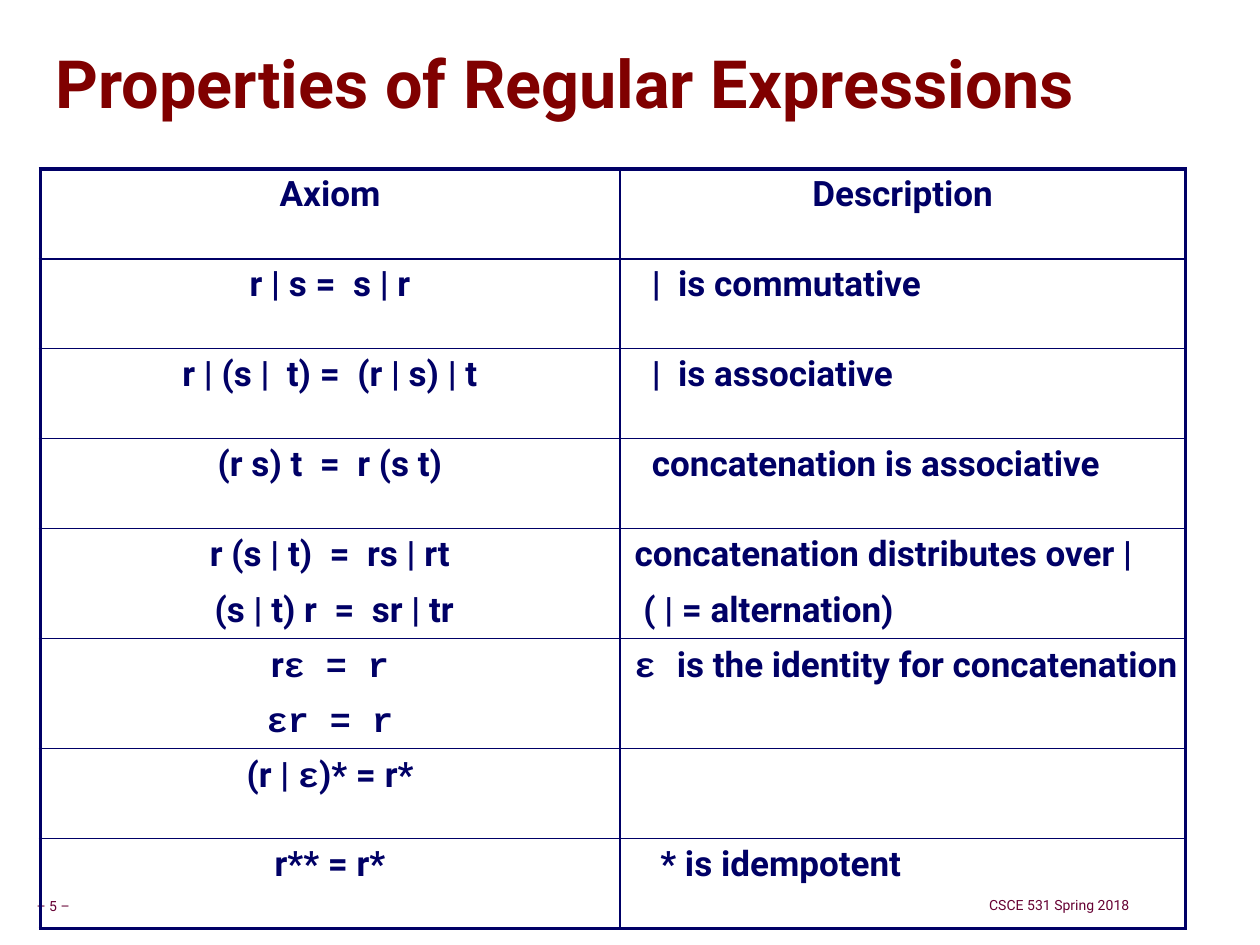
from typing import NamedTuple

from lxml.etree import SubElement
from pptx import Presentation
from pptx.dml.color import RGBColor
from pptx.enum.text import MSO_ANCHOR as Anchor, PP_ALIGN as Align
from pptx.oxml import parse_xml
from pptx.oxml.ns import nsdecls, qn
from pptx.util import Pt

COLORS = {"title": "800000", "table": "000066", "footer": "660033", "shadow": "969696"}
SANS, MONO = "Roboto", "Courier New"
INSET = 3.6
SPACE_WIDTH = 4.9
THIN, THICK = 1, 2.25


class Span(NamedTuple):
    text: str
    font: str = SANS


class Line(NamedTuple):
    spans: tuple[Span, ...]
    indent: int = 0  # in widths of one space


class Label(NamedTuple):
    text: str
    box: tuple[float, float, float, float]
    size: float
    color: str
    spacing: float
    anchor: Anchor
    inset: float = INSET
    bold: bool = False
    wrap: bool = False


class Row(NamedTuple):
    height: float
    axiom: tuple[Line, ...]
    description: tuple[Line, ...]


def line(*parts: str | Span, indent: int = 0) -> Line:
    return Line(tuple(Span(p) if isinstance(p, str) else p for p in parts), indent)


LABELS = [
    Label("– 5 –", (17.3, 504, 47.5, 22.3), 8, "footer", 0.9, Anchor.BOTTOM),
    Label("CSCE 531 Spring 2018", (561.6, 503.3, 154, 22.3), 8, "footer", 0.9, Anchor.BOTTOM),
    Label("Properties of Regular Expressions", (31.7, 19.4, 686, 61.2), 38, "title", 0.87,
          Anchor.MIDDLE, inset=0, bold=True, wrap=True),
]

SHORT, TALL = 51.4, 62.2
ROWS = [
    Row(SHORT, (line("Axiom"),), (line("Description"),)),
    Row(SHORT, (line("r | s =  s | r"),), (line("|  is commutative", indent=3),)),
    Row(SHORT, (line("r | (s |  t) =  (r | s) | t"),), (line("|  is associative", indent=3),)),
    Row(SHORT, (line("(r s) t  =  r (s t)"),),
        (line("concatenation is associative", indent=3),)),
    Row(TALL, (line("r (s | t)  =  rs | rt"), line("(s | t) r  =  sr | tr", indent=1)),
        (line("concatenation distributes over |", indent=1),
         line("( | = alternation)", indent=2))),
    Row(TALL, (line("r", Span("ε = r", MONO)), line(Span("εr = r", MONO))),
        (line(Span("ε ", MONO), "is the identity for concatenation", indent=1),)),
    Row(SHORT, (line("(r | ", Span("ε", MONO), ")* = r*"),), ()),
    Row(SHORT, (line("r** = r*"),), (line("* is idempotent", indent=4),)),
]
COLUMN_WIDTHS = (331.2, 323.3)
TABLE_LEFT, TABLE_TOP = 23, 96.5


def style_run(run, font: str, size: float, color: str, bold: bool) -> None:
    run.font.name = font
    run.font.size = Pt(size)
    run.font.bold = bold
    run.font.color.rgb = RGBColor.from_string(COLORS[color])


def add_text_shadow(run) -> None:
    effects = parse_xml(
        f'<a:effectLst {nsdecls("a")}><a:outerShdw dist="35921" dir="2700000">'
        f'<a:srgbClr val="{COLORS["shadow"]}"/></a:outerShdw></a:effectLst>')
    run.font._element.find(qn("a:solidFill")).addnext(effects)


def add_label(slide, label: Label):
    box = slide.shapes.add_textbox(*map(Pt, label.box))
    frame = box.text_frame
    frame.word_wrap = label.wrap
    frame.vertical_anchor = label.anchor
    frame.margin_left = frame.margin_right = Pt(label.inset)
    frame.margin_top = frame.margin_bottom = Pt(label.inset)
    frame.text = label.text
    paragraph = frame.paragraphs[0]
    paragraph.alignment = Align.LEFT
    paragraph.line_spacing = label.spacing
    style_run(paragraph.runs[0], SANS, label.size, label.color, label.bold)
    return box


def fill_cell(cell, lines: tuple[Line, ...], align: Align) -> None:
    cell.fill.background()
    cell.margin_left = cell.margin_right = Pt(INSET)
    cell.margin_top = cell.margin_bottom = Pt(INSET)
    frame = cell.text_frame
    for index, content in enumerate(lines):
        paragraph = frame.add_paragraph() if index else frame.paragraphs[0]
        paragraph.alignment = align
        paragraph.line_spacing = 0.95
        if index:
            paragraph.space_before = Pt(10)
        if content.indent:
            paragraph._p.get_or_add_pPr().set("marL", str(Pt(content.indent * SPACE_WIDTH)))
        for span in content.spans:
            run = paragraph.add_run()
            run.text = span.text
            style_run(run, span.font, 20, "table", True)


def set_borders(cell, widths: dict[str, float]) -> None:
    """Put the border lines ahead of the cell's fill, as the schema asks."""
    properties = cell._tc.get_or_add_tcPr()
    for position, (side, width) in enumerate(widths.items()):
        border = SubElement(properties, qn(f"a:{side}"), w=str(Pt(width)))
        fill = SubElement(border, qn("a:solidFill"))
        SubElement(fill, qn("a:srgbClr"), val=COLORS["table"])
        properties.insert(position, border)


def add_axiom_table(slide) -> None:
    last_row, last_column = len(ROWS) - 1, len(COLUMN_WIDTHS) - 1
    table = slide.shapes.add_table(
        len(ROWS), len(COLUMN_WIDTHS), Pt(TABLE_LEFT), Pt(TABLE_TOP),
        Pt(sum(COLUMN_WIDTHS)), Pt(sum(row.height for row in ROWS))).table
    table.first_row = table.horz_banding = False
    for column, width in zip(table.columns, COLUMN_WIDTHS):
        column.width = Pt(width)
    for r, row in enumerate(ROWS):
        table.rows[r].height = Pt(row.height)
        for c, lines in enumerate((row.axiom, row.description)):
            cell = table.cell(r, c)
            fill_cell(cell, lines, Align.CENTER if r == 0 or c == 0 else Align.LEFT)
            outer = {"lnL": c == 0, "lnR": c == last_column,
                     "lnT": r == 0, "lnB": r == last_row}
            set_borders(cell, {side: THICK if edge else THIN for side, edge in outer.items()})


def main() -> None:
    deck = Presentation()
    deck.slide_width, deck.slide_height = Pt(720), Pt(540)
    slide = deck.slides.add_slide(deck.slide_layouts[6])
    *footers, title = LABELS
    for footer in footers:
        add_label(slide, footer)
    heading = add_label(slide, title)
    add_text_shadow(heading.text_frame.paragraphs[0].runs[0])
    add_axiom_table(slide)
    deck.save("out.pptx")


if __name__ == "__main__":
    main()
